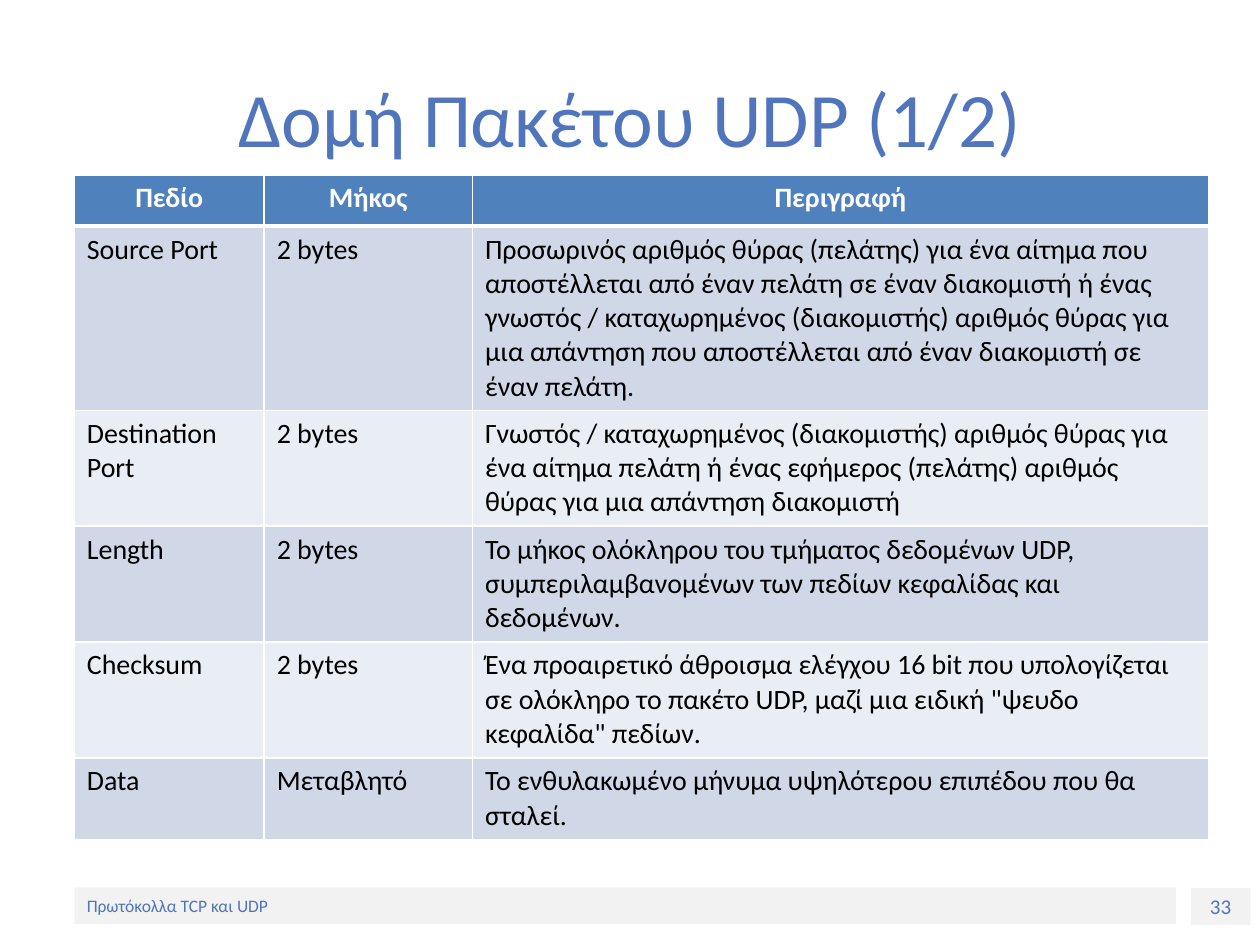
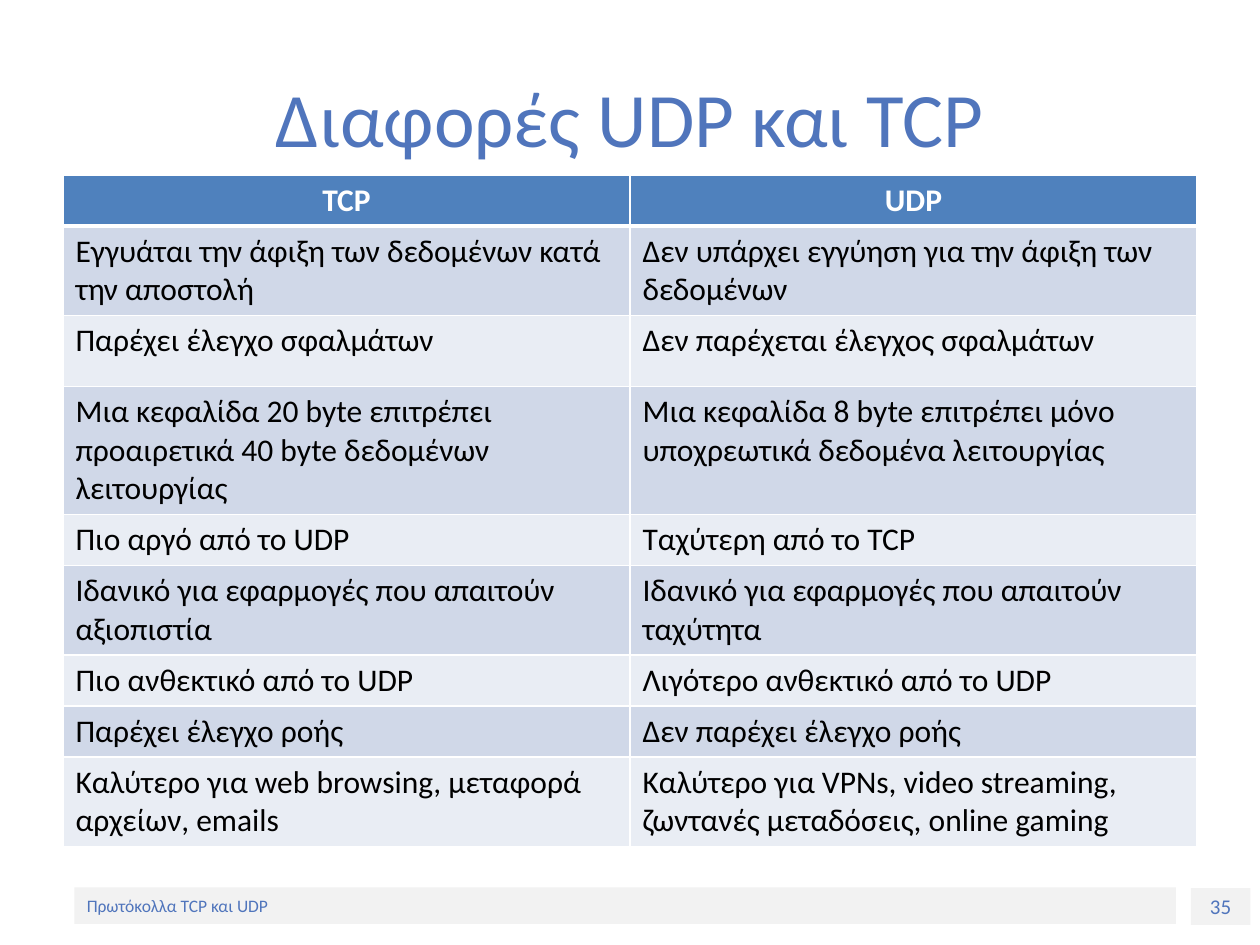
from dataclasses import dataclass

from lxml.etree import SubElement
from pptx import Presentation
from pptx.dml.color import RGBColor
from pptx.enum.shapes import MSO_SHAPE
from pptx.enum.text import MSO_ANCHOR, PP_ALIGN
from pptx.oxml.ns import qn
from pptx.util import Pt

FONT = "Calibri"
ACCENT = RGBColor(0x50, 0x75, 0xBC)
HEADER = RGBColor(0x4F, 0x81, 0xBD)
BAND_DARK = RGBColor(0xD0, 0xD8, 0xE8)
BAND_LIGHT = RGBColor(0xE9, 0xED, 0xF4)
FOOTER_FILL = RGBColor(0xF2, 0xF2, 0xF2)
WHITE = RGBColor(0xFF, 0xFF, 0xFF)
BLACK = RGBColor(0x00, 0x00, 0x00)

FOOTER_TEXT = "Πρωτόκολλα TCP και UDP"
TABLE_TOP = 100


@dataclass
class TableSlide:
    title: str
    number: int
    left: float
    size: float
    widths: list[float]
    heights: list[float]
    rows: list[tuple[str, ...]]


@dataclass
class FooterBox:
    left: float
    top: float
    width: float
    size: float
    align: PP_ALIGN


FOOTER_BOX = FooterBox(42.5, 507, 629.5, 10, PP_ALIGN.LEFT)
NUMBER_BOX = FooterBox(680.5, 507.5, 34, 12, PP_ALIGN.CENTER)

SLIDES = [
    TableSlide(
        "Δομή Πακέτου UDP (1/2)", 33, 42.5, 16,
        [108.5, 119, 420.5], [29.2, 105.3, 66.2, 66.2, 66.2, 46.8],
        [
            ("Πεδίο", "Μήκος", "Περιγραφή"),
            ("Source Port", "2 bytes",
             "Προσωρινός αριθμός θύρας (πελάτης) για ένα αίτημα που αποστέλλεται "
             "από έναν πελάτη σε έναν διακομιστή ή ένας γνωστός / καταχωρημένος "
             "(διακομιστής) αριθμός θύρας για μια απάντηση που αποστέλλεται από "
             "έναν διακομιστή σε έναν πελάτη."),
            ("Destination Port", "2 bytes",
             "Γνωστός / καταχωρημένος (διακομιστής) αριθμός θύρας για ένα αίτημα "
             "πελάτη ή ένας εφήμερος (πελάτης) αριθμός θύρας για μια απάντηση "
             "διακομιστή"),
            ("Length", "2 bytes",
             "Το μήκος ολόκληρου του τμήματος δεδομένων UDP, "
             "συμπεριλαμβανομένων των πεδίων κεφαλίδας και δεδομένων."),
            ("Checksum", "2 bytes",
             "Ένα προαιρετικό άθροισμα ελέγχου 16 bit που υπολογίζεται σε "
             "ολόκληρο το πακέτο UDP, μαζί μια ειδική \"ψευδο κεφαλίδα\" πεδίων."),
            ("Data", "Μεταβλητό",
             "Το ενθυλακωμένο μήνυμα υψηλότερου επιπέδου που θα σταλεί."),
        ],
    ),
    TableSlide(
        "Διαφορές UDP και TCP", 35, 36, 18,
        [324, 324], [29.2, 51, 40.4, 73, 29.2, 51, 29.2, 29.2, 51],
        [
            ("TCP", "UDP"),
            ("Εγγυάται την άφιξη των δεδομένων κατά την αποστολή",
             "Δεν υπάρχει εγγύηση για την άφιξη των δεδομένων"),
            ("Παρέχει έλεγχο σφαλμάτων", "Δεν παρέχεται έλεγχος σφαλμάτων"),
            ("Μια κεφαλίδα 20 byte επιτρέπει προαιρετικά 40 byte δεδομένων "
             "λειτουργίας",
             "Μια κεφαλίδα 8 byte επιτρέπει μόνο υποχρεωτικά δεδομένα λειτουργίας"),
            ("Πιο αργό από το UDP", "Ταχύτερη από το TCP"),
            ("Ιδανικό για εφαρμογές που απαιτούν αξιοπιστία",
             "Ιδανικό για εφαρμογές που απαιτούν ταχύτητα"),
            ("Πιο ανθεκτικό από το UDP", "Λιγότερο ανθεκτικό από το UDP"),
            ("Παρέχει έλεγχο ροής", "Δεν παρέχει έλεγχο ροής"),
            ("Καλύτερο για web browsing, μεταφορά αρχείων, emails",
             "Καλύτερο για VPNs, video streaming, ζωντανές μεταδόσεις, "
             "online gaming"),
        ],
    ),
]


def write(tf, text: str, size: float, color: RGBColor, align: PP_ALIGN,
          bold: bool = False) -> None:
    tf.text = text
    p = tf.paragraphs[0]
    p.alignment = align
    p.font.name = FONT
    p.font.size = Pt(size)
    p.font.bold = bold
    p.font.color.rgb = color


def add_footer_box(s, box: FooterBox, text: str) -> None:
    sp = s.shapes.add_shape(MSO_SHAPE.RECTANGLE, Pt(box.left), Pt(box.top),
                            Pt(box.width), Pt(21))
    sp.shadow.inherit = False
    sp.fill.solid()
    sp.fill.fore_color.rgb = FOOTER_FILL
    sp.line.fill.background()
    sp.text_frame.vertical_anchor = MSO_ANCHOR.MIDDLE
    write(sp.text_frame, text, box.size, ACCENT, box.align)


def set_title(s, text: str) -> None:
    sp = s.shapes.title
    sp.left, sp.top, sp.width, sp.height = Pt(36), Pt(21.6), Pt(648), Pt(90)
    sp.text_frame.vertical_anchor = MSO_ANCHOR.MIDDLE
    write(sp.text_frame, text, 44, ACCENT, PP_ALIGN.CENTER)


def set_borders(cell, row: int) -> None:
    """White lines, thicker between the header and the body."""
    top, bottom = (3 if row == 1 else 1), (3 if row == 0 else 1)
    props = cell._tc.get_or_add_tcPr()
    for side, width in (("L", 1), ("R", 1), ("T", top), ("B", bottom)):
        ln = SubElement(props, qn(f"a:ln{side}"), w=str(Pt(width)))
        fill = SubElement(ln, qn("a:solidFill"))
        SubElement(fill, qn("a:srgbClr"), val=str(WHITE))


def add_grid(s, spec: TableSlide) -> None:
    table = s.shapes.add_table(
        len(spec.rows), len(spec.widths), Pt(spec.left), Pt(TABLE_TOP),
        Pt(sum(spec.widths)), Pt(sum(spec.heights))).table
    for column, width in zip(table.columns, spec.widths):
        column.width = Pt(width)
    for i, (texts, height) in enumerate(zip(spec.rows, spec.heights)):
        table.rows[i].height = Pt(height)
        is_header = i == 0
        band = HEADER if is_header else BAND_DARK if i % 2 else BAND_LIGHT
        color = WHITE if is_header else BLACK
        align = PP_ALIGN.CENTER if is_header else PP_ALIGN.LEFT
        for j, text in enumerate(texts):
            cell = table.cell(i, j)
            set_borders(cell, i)
            cell.fill.solid()
            cell.fill.fore_color.rgb = band
            write(cell.text_frame, text, spec.size, color, align, is_header)


def main() -> None:
    prs = Presentation()
    prs.slide_width, prs.slide_height = Pt(720), Pt(540)
    for spec in SLIDES:
        s = prs.slides.add_slide(prs.slide_layouts[5])
        # Footer
        add_footer_box(s, NUMBER_BOX, str(spec.number))
        add_footer_box(s, FOOTER_BOX, FOOTER_TEXT)
        # Title and table
        set_title(s, spec.title)
        add_grid(s, spec)
    prs.save("out.pptx")


if __name__ == "__main__":
    main()
